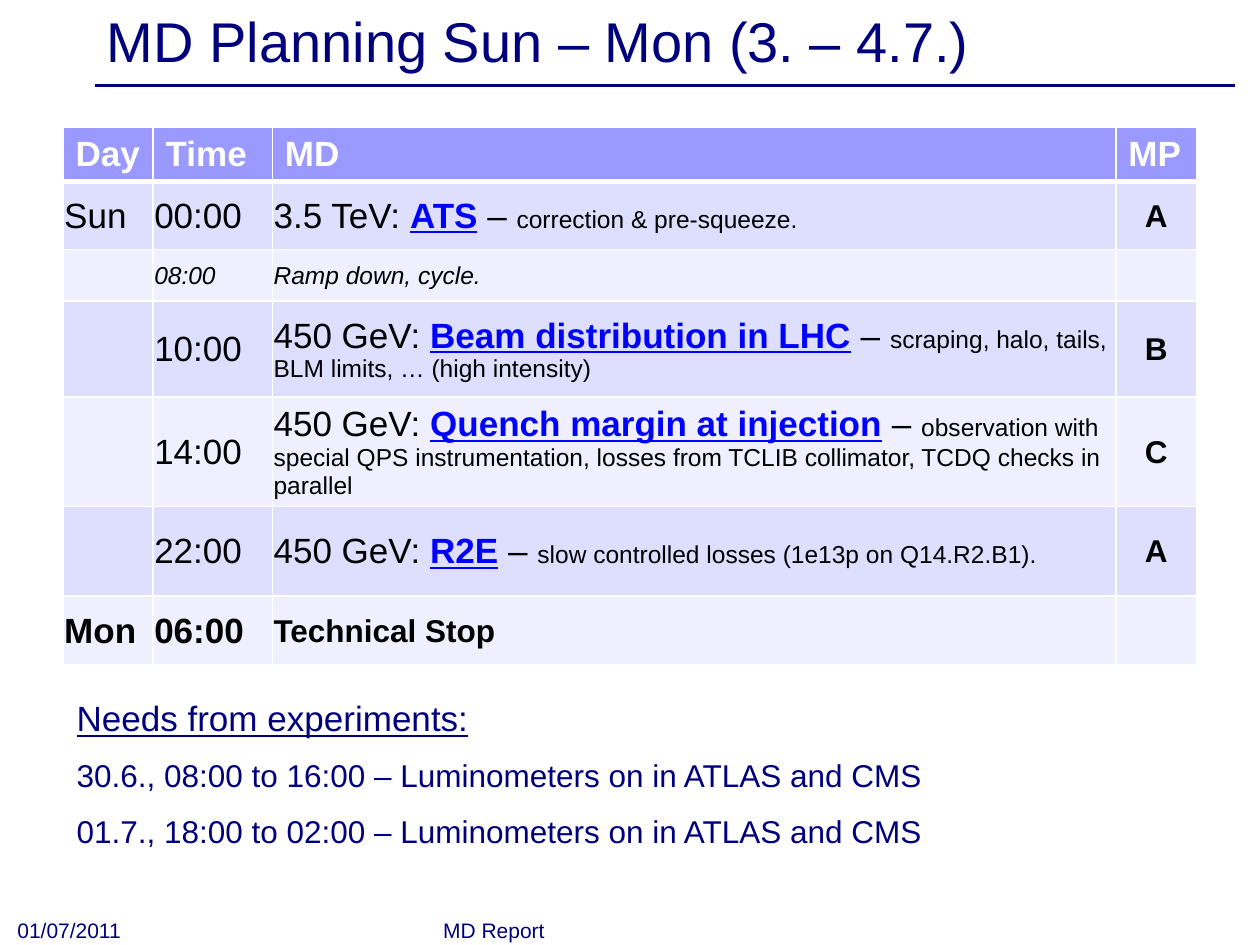
from lxml.etree import SubElement
from pptx import Presentation
from pptx.dml.color import RGBColor
from pptx.enum.shapes import MSO_CONNECTOR
from pptx.enum.text import MSO_ANCHOR, PP_ALIGN
from pptx.oxml.ns import qn
from pptx.util import Pt

NAVY = RGBColor(0x00, 0x00, 0x7D)
BLUE = RGBColor(0x00, 0x00, 0xFF)
BLACK = RGBColor(0x00, 0x00, 0x00)
WHITE = RGBColor(0xFF, 0xFF, 0xFF)
HEADER_FILL = RGBColor(0x99, 0x99, 0xFF)
BAND_FILLS = [RGBColor(0xDE, 0xDE, 0xFF), RGBColor(0xEF, 0xEF, 0xFF)]


def add_run(paragraph, text, size, color, bold=False, italic=False, underline=False):
    run = paragraph.add_run()
    run.text = text
    font = run.font
    font.name, font.size = "Arial", Pt(size)
    font.bold, font.italic, font.underline = bold, italic, underline
    font.color.rgb = color


def set_borders(cell, widths):
    properties = cell._tc.get_or_add_tcPr()
    for side, width in zip(("lnL", "lnR", "lnT", "lnB"), widths):
        line = SubElement(properties, qn(f"a:{side}"), w=str(Pt(width)))
        fill = SubElement(line, qn("a:solidFill"))
        SubElement(fill, qn("a:srgbClr"), val=str(WHITE))


presentation = Presentation()
presentation.slide_width, presentation.slide_height = Pt(720), Pt(540)
slide = presentation.slides.add_slide(presentation.slide_layouts[6])

# Rule under the title
rule = slide.shapes.add_connector(MSO_CONNECTOR.STRAIGHT, Pt(54), Pt(49), Pt(705.6), Pt(49))
rule.line.color.rgb = NAVY
rule.line.width = Pt(2)
SubElement(rule._element.spPr, qn("a:effectLst"))

# Title and footer
for text, left, top, width, height, size, anchor in [
    ("MD Planning Sun – Mon (3. – 4.7.)", 54, 2.2, 648, 41, 32, MSO_ANCHOR.MIDDLE),
    ("MD Report", 246.2, 522, 228.2, 20.2, 12, MSO_ANCHOR.BOTTOM),
    ("01/07/2011", 2.9, 521.3, 167.8, 20.9, 12, MSO_ANCHOR.BOTTOM),
]:
    text_frame = slide.shapes.add_textbox(Pt(left), Pt(top), Pt(width), Pt(height)).text_frame
    text_frame.word_wrap = True
    text_frame.vertical_anchor = anchor
    add_run(text_frame.paragraphs[0], text, size, NAVY)

# Schedule: each cell is a list of (text, size, styles)
LINK = {"color": BLUE, "bold": True, "underline": True}
BOLD = {"bold": True}
ITALIC = {"italic": True}


schedule = [
    [[("Sun", 20, {})], [("00:00", 20, {})],
     [("3.5 TeV: ", 20, {}), ("ATS", 20, LINK), (" – ", 20, {}),
      ("correction & pre-squeeze.", 14, {})],
     [("A", 18, BOLD)]],
    [[], [("08:00", 14, ITALIC)], [("Ramp down, cycle.", 14, ITALIC)], []],
    [[], [("10:00", 20, {})],
     [("450 GeV: ", 20, {}), ("Beam distribution in LHC", 20, LINK), (" – ", 20, {}),
      ("scraping, halo, tails, BLM limits, … (high intensity)", 14, {})],
     [("B", 18, BOLD)]],
    [[], [("14:00", 20, {})],
     [("450 GeV: ", 20, {}), ("Quench margin at injection", 20, LINK), (" – ", 20, {}),
      ("observation with special QPS instrumentation, losses from TCLIB collimator, "
       "TCDQ checks in parallel", 14, {})],
     [("C", 18, BOLD)]],
    [[], [("22:00", 20, {})],
     [("450 GeV: ", 20, {}), ("R2E", 20, LINK), (" – ", 20, {}),
      ("slow controlled losses (1e13p on Q14.R2.B1).", 14, {})],
     [("A", 18, BOLD)]],
    [[("Mon", 20, BOLD)], [("06:00", 20, BOLD)], [("Technical Stop", 18, BOLD)], []],
]
header = [[(name, 20, {"color": WHITE, "bold": True})] for name in ("Day", "Time", "MD", "MP")]
rows = [header] + schedule
column_widths = [51.5, 68.2, 482, 46.3]
row_heights = [29.5, 38.9, 29.5, 54.7, 62.6, 51.1, 39.6]

table = slide.shapes.add_table(
    len(rows), len(column_widths), Pt(36), Pt(72.5),
    Pt(sum(column_widths)), Pt(sum(row_heights))).table
for column, width in zip(table.columns, column_widths):
    column.width = Pt(width)
for row, height in zip(table.rows, row_heights):
    row.height = Pt(height)

for row_index, row in enumerate(rows):
    for column_index, runs in enumerate(row):
        cell = table.cell(row_index, column_index)
        set_borders(cell, (1, 1, 3 if row_index == 1 else 1, 3 if row_index == 0 else 1))
        cell.fill.solid()
        cell.fill.fore_color.rgb = BAND_FILLS[(row_index - 1) % 2] if row_index else HEADER_FILL
        cell.vertical_anchor = MSO_ANCHOR.MIDDLE
        paragraph = cell.text_frame.paragraphs[0]
        if row_index and runs:
            cell.margin_left = cell.margin_right = cell.margin_top = Pt(0.7)
            cell.margin_bottom = Pt(0)
            if column_index == 3:
                paragraph.alignment = PP_ALIGN.CENTER
        for text, size, styles in runs:
            add_run(paragraph, text, size, **{"color": BLACK, **styles})

# Needs from experiments
text_frame = slide.shapes.add_textbox(Pt(36.7), Pt(394.6), Pt(502.6), Pt(97.2)).text_frame
text_frame.word_wrap = False
add_run(text_frame.paragraphs[0], "Needs from experiments:", 20, NAVY, underline=True)
for text in (
    "30.6., 08:00 to 16:00 – Luminometers on in ATLAS and CMS",
    "01.7., 18:00 to 02:00 – Luminometers on in ATLAS and CMS",
):
    paragraph = text_frame.add_paragraph()
    paragraph.space_before = Pt(10)
    add_run(paragraph, text, 18, NAVY)

presentation.save("out.pptx")
